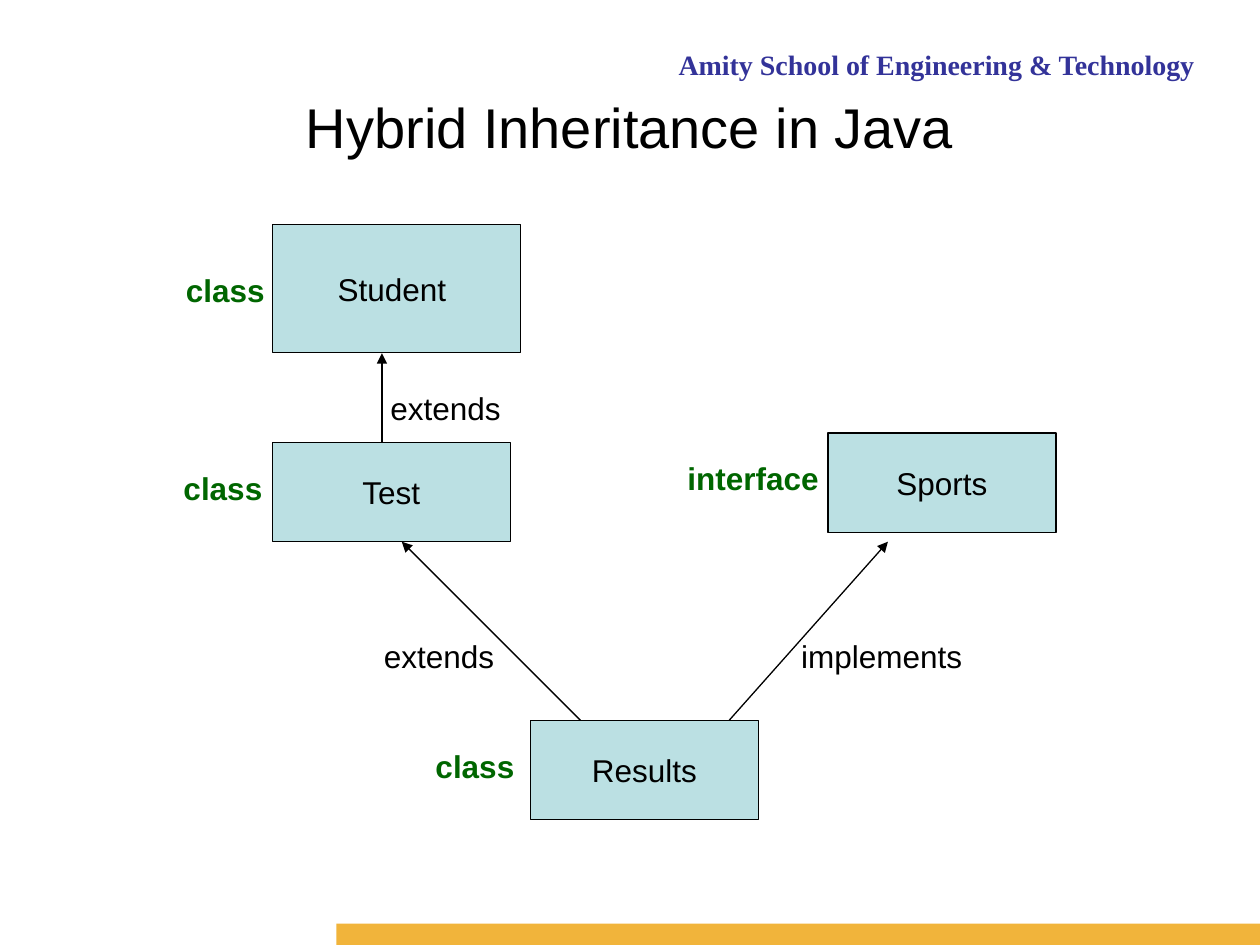
import pptx
import pptx.dml.color
import pptx.enum.shapes
import pptx.enum.text
import pptx.oxml
import pptx.oxml.ns
import pptx.util

Cm = pptx.util.Cm
Pt = pptx.util.Pt
RGBColor = pptx.dml.color.RGBColor
ALIGN = pptx.enum.text.PP_ALIGN
ANCHOR = pptx.enum.text.MSO_ANCHOR
AUTO_SIZE = pptx.enum.text.MSO_AUTO_SIZE

BLACK = RGBColor(0x00, 0x00, 0x00)
INDIGO = RGBColor(0x33, 0x33, 0x99)
GREEN = RGBColor(0x00, 0x66, 0x00)
PALE_TEAL = RGBColor(0xBB, 0xE0, 0xE3)
AMBER = RGBColor(0xF1, 0xB4, 0x3B)

TYPES = [
    ("Student ", 5.49, 4.52, 5.0, 2.59),
    ("Test", 5.49, 8.92, 4.8, 2.0),
    ("Sports", 16.69, 8.73, 4.6, 2.0),
    ("Results", 10.69, 14.52, 4.6, 2.0),
]
INHERITANCE = [
    ((11.7, 14.52), (8.1, 10.92)),
    ((14.7, 14.52), (17.9, 10.92)),
    ((7.7, 8.92), (7.7, 7.12)),
]
KINDS = [
    ("class", 3.5, 5.34, 2.6),
    ("interface", 13.61, 9.13, 3.2),
    ("class", 3.45, 9.33, 3.0),
    ("class", 8.53, 14.93, 2.6),
]
KEYWORDS = [
    ("extends", 7.62, 7.72, 3.2),
    ("implements", 15.9, 12.72, 4.0),
    ("extends", 7.49, 12.72, 3.2),
]


def write(frame, text, size=18, font="Arial", color=BLACK, bold=False,
          align=ALIGN.LEFT, anchor=ANCHOR.TOP, wrap=True):
    frame.word_wrap = wrap
    frame.vertical_anchor = anchor
    paragraph = frame.paragraphs[0]
    paragraph.text = text
    paragraph.alignment = align
    paragraph.font.name = font
    paragraph.font.size = Pt(size)
    paragraph.font.bold = bold
    paragraph.font.color.rgb = color


class Diagram:
    """Current slide and the style shared by its elements."""

    line_color = BLACK
    line_width = Pt(0.75)
    label_height = 1.02

    def __init__(self, slide):
        self.slide = slide

    def title(self, text, left, top, width, height):
        heading = self.slide.shapes.title
        heading.left, heading.top = Cm(left), Cm(top)
        heading.width, heading.height = Cm(width), Cm(height)
        write(heading.text_frame, text, size=32, align=ALIGN.CENTER,
              anchor=ANCHOR.MIDDLE)

    def rectangle(self, left, top, width, height, fill):
        rectangle = self.slide.shapes.add_shape(
            pptx.enum.shapes.MSO_SHAPE.RECTANGLE,
            Cm(left), Cm(top), Cm(width), Cm(height))
        rectangle.shadow.inherit = False
        rectangle.fill.solid()
        rectangle.fill.fore_color.rgb = fill
        rectangle.line.fill.background()
        return rectangle

    def type_box(self, name, left, top, width, height):
        box = self.rectangle(left, top, width, height, PALE_TEAL)
        box.line.color.rgb = self.line_color
        box.line.width = self.line_width
        write(box.text_frame, name, align=ALIGN.CENTER,
              anchor=ANCHOR.MIDDLE, wrap=False)

    def label(self, text, left, top, width, height=label_height, **style):
        label = self.slide.shapes.add_textbox(
            Cm(left), Cm(top), Cm(width), Cm(height))
        write(label.text_frame, text, **style)
        label.text_frame.auto_size = AUTO_SIZE.SHAPE_TO_FIT_TEXT

    def arrow(self, start, end):
        arrow = self.slide.shapes.add_connector(
            pptx.enum.shapes.MSO_CONNECTOR.STRAIGHT,
            *map(Cm, start), *map(Cm, end))
        arrow.line.color.rgb = self.line_color
        arrow.line.width = self.line_width
        head = pptx.oxml.parse_xml(
            f'<a:tailEnd {pptx.oxml.ns.nsdecls("a")} type="triangle"/>')
        arrow.line._get_or_add_ln().append(head)
        no_effects = pptx.oxml.parse_xml(
            f'<a:effectLst {pptx.oxml.ns.nsdecls("a")}/>')
        arrow._element.spPr.append(no_effects)


def main():
    deck = pptx.Presentation()
    deck.slide_width, deck.slide_height = Cm(25.4), Cm(19.05)
    title_only = deck.slide_layouts[5]
    diagram = Diagram(deck.slides.add_slide(title_only))

    diagram.label("Amity School of Engineering & Technology",
                  11.43, 0.84, 12.9, 0.84, size=16, font="Times New Roman",
                  color=INDIGO, bold=True, align=ALIGN.RIGHT)
    diagram.rectangle(6.78, 18.62, 18.62, 0.43, AMBER)
    diagram.title("Hybrid Inheritance in Java", 1.27, 1.85, 22.86, 1.37)

    for type_box in TYPES:
        diagram.type_box(*type_box)
    for start, end in INHERITANCE:
        diagram.arrow(start, end)
    for kind in KINDS:
        diagram.label(*kind, color=GREEN, bold=True)
    for keyword in KEYWORDS:
        diagram.label(*keyword)

    deck.save("out.pptx")


if __name__ == "__main__":
    main()
